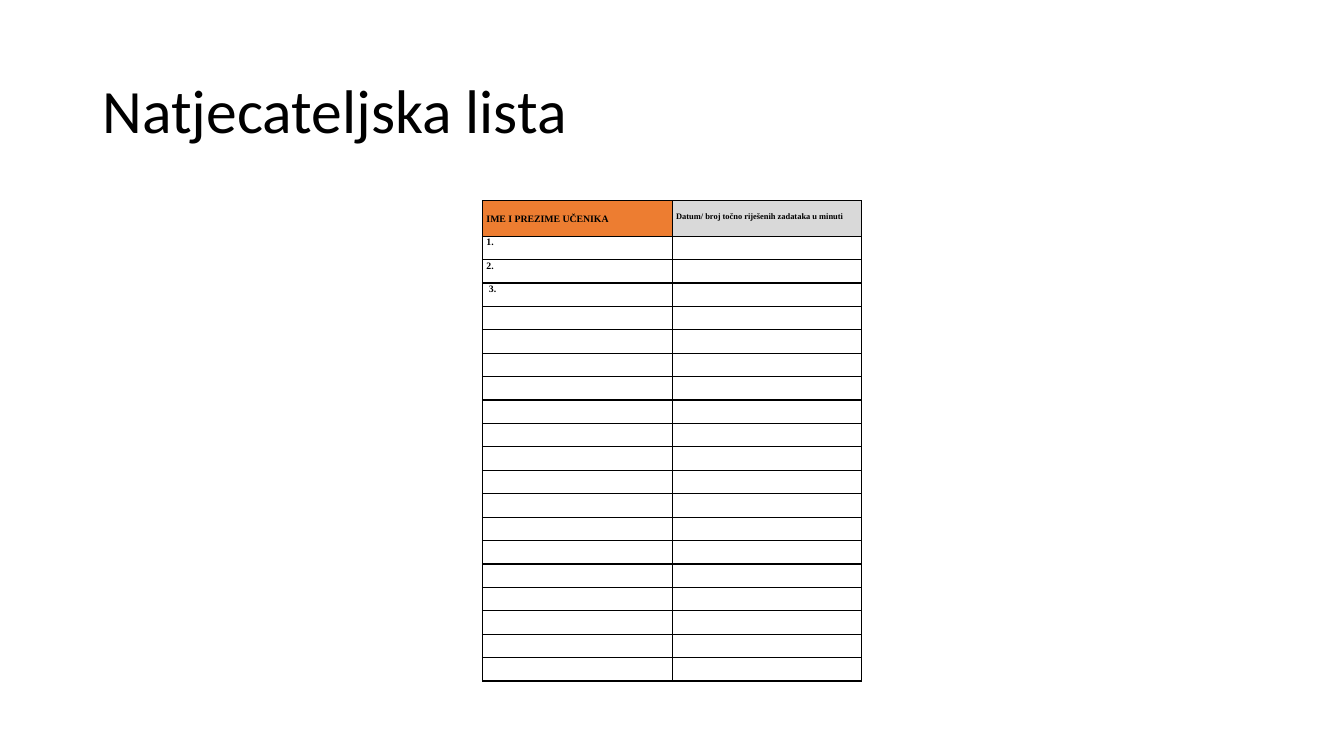
from lxml.etree import SubElement
from pptx import Presentation
from pptx.dml.color import RGBColor
from pptx.enum.text import MSO_ANCHOR, PP_ALIGN
from pptx.oxml.ns import qn
from pptx.util import Cm, Pt

BLACK, WHITE = "000000", "FFFFFF"
HEADS = [("IME I PREZIME UČENIKA", 7, "ED7D31", 0.3),
         ("Datum/ broj točno riješenih zadataka u minuti", 6, "D9D9D9", 0.26)]
NAMES = ["1.", "2.", " 3."]
ROWS = 19


def color(code):
    """Turn a hex string into a colour."""
    return RGBColor.from_string(code)


def style(item, form):
    """Set each attribute in the format dict."""
    for name, value in form.items():
        setattr(item, name, value)


def border(cell):
    """Draw a thin black line on all sides of a cell."""
    props = cell._tc.get_or_add_tcPr()
    for side in ("lnL", "lnR", "lnT", "lnB"):
        line = SubElement(props, qn("a:" + side), w=str(Pt(1)))
        fill = SubElement(line, qn("a:solidFill"))
        SubElement(fill, qn("a:srgbClr"), val=BLACK)


def write(part, text, size, face, bold=False):
    """Put one run of formatted text in a paragraph."""
    run = part.add_run()
    run.text = text
    style(run.font, {"size": Pt(size), "name": face, "bold": bold})
    run.font.color.rgb = color(BLACK)


def fill_cell(cell, text="", size=7, back=WHITE, top=0):
    """Format a cell and write its text."""
    border(cell)
    cell.fill.solid()
    cell.fill.fore_color.rgb = color(back)
    style(cell, {"margin_left": Cm(0.1), "margin_right": Cm(0.1),
                 "margin_top": Cm(top), "margin_bottom": 0,
                 "vertical_anchor": MSO_ANCHOR.TOP})
    part = cell.text_frame.paragraphs[0]
    part.line_spacing = 1.07
    if text:
        write(part, text, size, "Times New Roman", True)
    else:
        part._p.get_or_add_endParaRPr().set("sz", str(size * 100))


def add_title(slide, left, top, width, height):
    """Place the slide title in its box."""
    title = slide.shapes.title
    style(title, {"left": left, "top": top, "width": width, "height": height})
    style(title.text_frame, {"vertical_anchor": MSO_ANCHOR.MIDDLE,
                             "word_wrap": True})
    part = title.text_frame.paragraphs[0]
    style(part, {"line_spacing": 0.9, "alignment": PP_ALIGN.LEFT})
    write(part, "Natjecateljska lista", 44, "Calibri")


def add_list(slide, left, top, width, height):
    """Place the contest list with a header and equal rows."""
    table = slide.shapes.add_table(ROWS + 1, 2, left, top, width, height).table
    style(table, {"first_row": False, "horz_banding": False})
    head = Cm(0.89)
    for col in table.columns:
        col.width = width // 2
    for row in table.rows:
        row.height = (height - head) // ROWS
    table.rows[0].height = head
    for col, (text, size, back, gap) in enumerate(HEADS):
        fill_cell(table.cell(0, col), text, size, back, gap)
    for row in range(ROWS):
        fill_cell(table.cell(row + 1, 0), NAMES[row] if row < len(NAMES) else "")
        fill_cell(table.cell(row + 1, 1))


def main():
    """Build and save the slide."""
    deck = Presentation()
    style(deck, {"slide_width": Cm(33.87), "slide_height": Cm(19.05)})
    slide = deck.slides.add_slide(deck.slide_layouts[5])
    add_title(slide, Cm(2.33), Cm(1.01), Cm(29.21), Cm(3.68))
    add_list(slide, Cm(12.16), Cm(5.06), Cm(9.56), Cm(12.1))
    deck.save("out.pptx")


if __name__ == "__main__":
    main()
